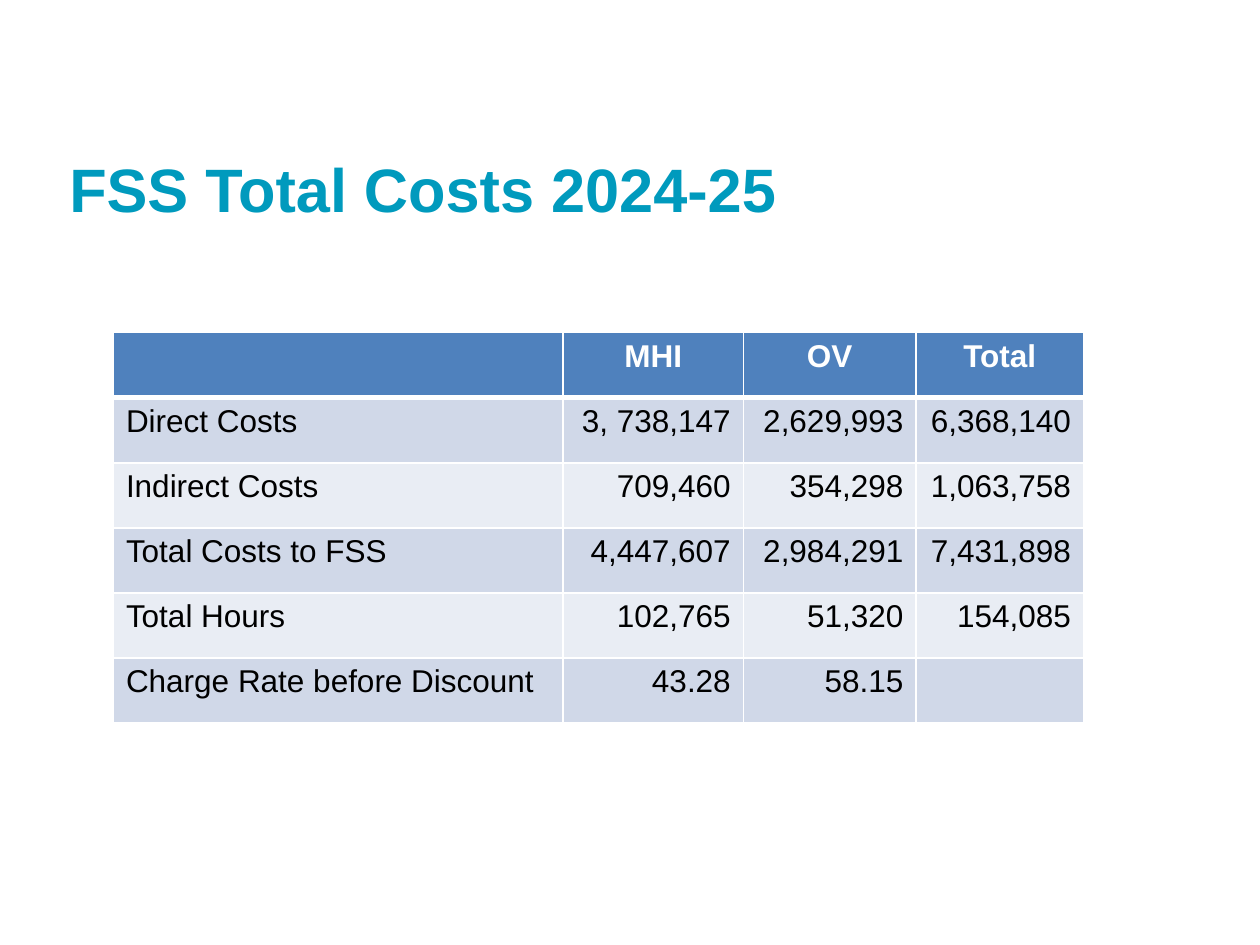
from dataclasses import dataclass

from lxml import etree
from pptx import Presentation
from pptx.dml.color import RGBColor
from pptx.enum.text import MSO_ANCHOR, PP_ALIGN
from pptx.oxml.ns import qn
from pptx.util import Inches, Pt

LEFT, CENTER, RIGHT = PP_ALIGN.LEFT, PP_ALIGN.CENTER, PP_ALIGN.RIGHT
TOP = MSO_ANCHOR.TOP
FONT = "Arial"
WHITE, BLACK, TEAL, BLUE = "FFFFFF", "000000", "009ABD", "4F81BD"
BANDS = ("D0D8E8", "E9EDF4")
TITLE_ONLY = 5


@dataclass
class CellStyle:
    fill: str
    color: str
    bold: bool
    alignment: PP_ALIGN
    top_border: float = 1
    bottom_border: float = 1


COLUMN_WIDTHS = (3.57, 1.43, 1.37, 1.33)
TABLE_HEIGHT = 3.1
COSTS = (
    ("", "MHI", "OV", "Total"),
    ("Direct Costs", "3, 738,147", "2,629,993", "6,368,140"),
    ("Indirect Costs", "709,460", "354,298", "1,063,758"),
    ("Total Costs to FSS", "4,447,607", "2,984,291", "7,431,898"),
    ("Total Hours", "102,765", "51,320", "154,085"),
    ("Charge Rate before Discount", "43.28", "58.15", ""),
)


def rgb(color: str) -> RGBColor:
    return RGBColor.from_string(color)


def format_font(paragraph, size: float, color: str, bold: bool) -> None:
    font = paragraph.font
    font.name, font.size, font.bold = FONT, Pt(size), bold
    font.color.rgb = rgb(color)


def cell_style(row: int, column: int) -> CellStyle:
    if row == 0:
        return CellStyle(BLUE, WHITE, True, CENTER, bottom_border=3)
    return CellStyle(BANDS[(row - 1) % 2], BLACK, False,
                     RIGHT if column else LEFT,
                     top_border=3 if row == 1 else 1)


def add_borders(cell, style: CellStyle) -> None:
    properties = cell._tc.get_or_add_tcPr()
    widths = {"a:lnL": 1, "a:lnR": 1,
              "a:lnT": style.top_border, "a:lnB": style.bottom_border}
    for index, (tag, width) in enumerate(widths.items()):
        line = etree.Element(qn(tag), w=str(Pt(width)))
        fill = etree.SubElement(line, qn("a:solidFill"))
        etree.SubElement(fill, qn("a:srgbClr"), val=WHITE)
        properties.insert(index, line)


def fill_cell(cell, text: str, style: CellStyle) -> None:
    cell.fill.solid()
    cell.fill.fore_color.rgb = rgb(style.fill)
    add_borders(cell, style)
    cell.text = text
    paragraph = cell.text_frame.paragraphs[0]
    paragraph.alignment = style.alignment
    format_font(paragraph, 18, style.color, style.bold)


def add_title(slide, text: str) -> None:
    title = slide.shapes.title
    title.left, title.top = Inches(0.45), Inches(1.15)
    title.width, title.height = Inches(8.73), Inches(1.15)
    title.text_frame.vertical_anchor = TOP
    title.text_frame.text = text
    paragraph = title.text_frame.paragraphs[0]
    paragraph.alignment = LEFT
    format_font(paragraph, 35, TEAL, True)


def add_cost_table(slide) -> None:
    table = slide.shapes.add_table(
        len(COSTS), len(COLUMN_WIDTHS), Inches(0.9), Inches(2.64),
        Inches(sum(COLUMN_WIDTHS)), Inches(TABLE_HEIGHT)).table
    for column, width in zip(table.columns, COLUMN_WIDTHS):
        column.width = Inches(width)
    for row, values in enumerate(COSTS):
        for column, value in enumerate(values):
            fill_cell(table.cell(row, column), value, cell_style(row, column))


def main() -> None:
    presentation = Presentation()
    presentation.slide_width, presentation.slide_height = Inches(10), Inches(7.5)
    slide = presentation.slides.add_slide(presentation.slide_layouts[TITLE_ONLY])
    # Heading
    add_title(slide, "FSS Total Costs 2024-25")
    # Costs by site
    add_cost_table(slide)
    presentation.save("out.pptx")


if __name__ == "__main__":
    main()
